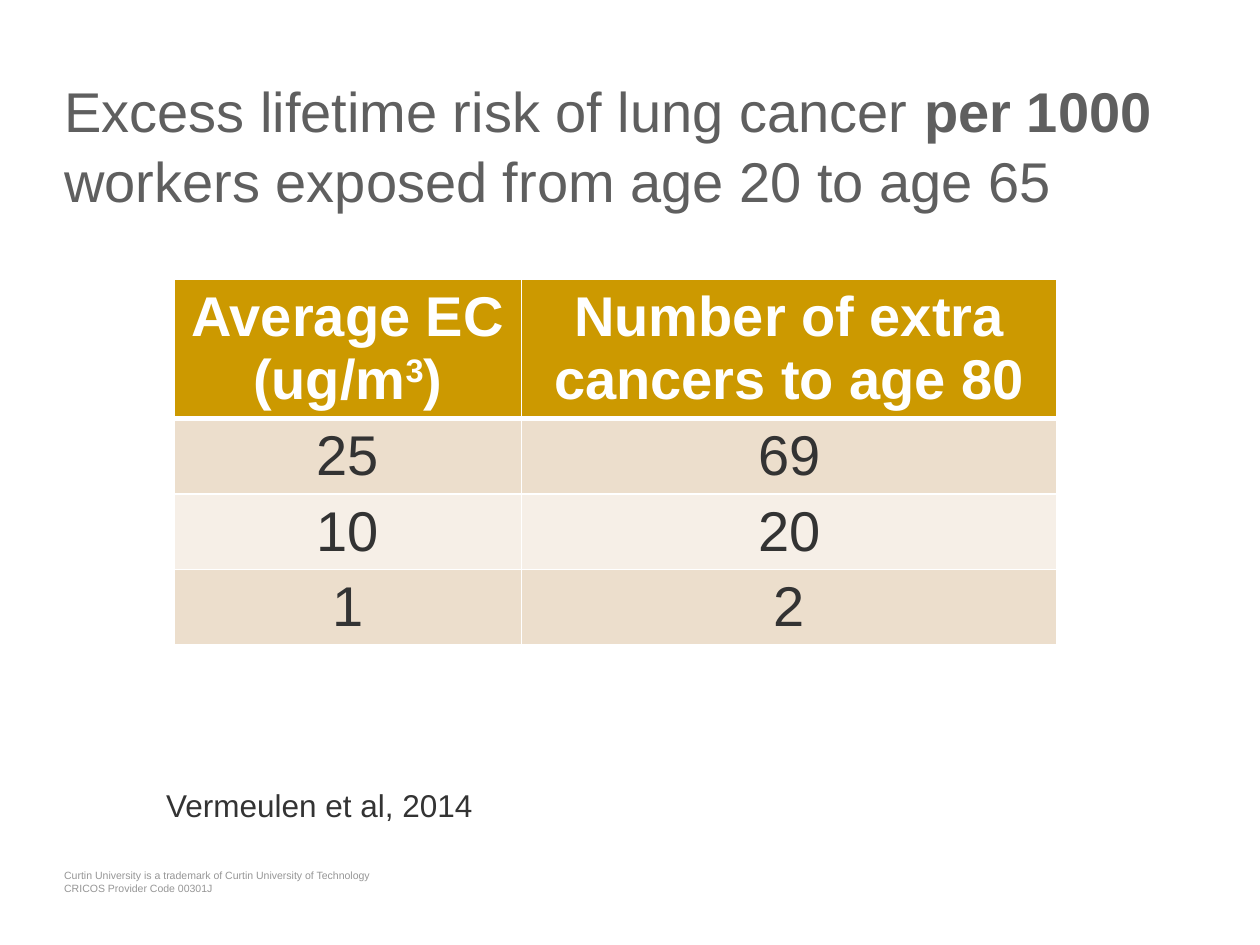
"""Build a slide with a table of excess lung cancer risk by exposure level."""
from lxml.etree import SubElement
from pptx import Presentation
from pptx.dml.color import RGBColor
from pptx.enum.text import MSO_ANCHOR, MSO_AUTO_SIZE, PP_ALIGN
from pptx.oxml.ns import qn
from pptx.util import Inches, Pt

WHITE = RGBColor(0xFF, 0xFF, 0xFF)
GOLD = RGBColor(0xCC, 0x99, 0x00)
SAND = RGBColor(0xEC, 0xDE, 0xCC)
CREAM = RGBColor(0xF6, 0xEF, 0xE7)
INK = RGBColor(0x33, 0x33, 0x33)
TITLE_GRAY = RGBColor(0x5F, 0x5F, 0x5F)
FOOTER_GRAY = RGBColor(0x96, 0x96, 0x96)

TITLE = [
    ("Excess lifetime risk of lung cancer ", ""),
    ("per 1000 ", "bold"),
    ("workers exposed from age 20 to age 65", ""),
]
ROWS = [
    ([("Average EC (ug/m", ""), ("3", "superscript"), (")", "")],
     "Number of extra cancers to age 80"),
    ("25", "69"),
    ("10", "20"),
    ("1", "2"),
]
COLUMN_WIDTHS = [2.76, 4.25]
ROW_HEIGHTS = [1.1, 0.6, 0.6, 0.6]
CITATION = "Vermeulen et al, 2014"
FOOTER = [
    "Curtin University is a trademark of Curtin University of Technology",
    "CRICOS Provider Code 00301J",
]


def write(frame, paragraphs, size, color, bold=False, align=PP_ALIGN.LEFT, spacing=1.0):
    """Fill a text frame with paragraphs, each a string or a list of styled runs."""
    for index, content in enumerate(paragraphs):
        paragraph = frame.paragraphs[0] if index == 0 else frame.add_paragraph()
        paragraph.alignment = align
        paragraph.line_spacing = spacing
        paragraph.space_before = Pt(0)
        runs = [(content, "")] if isinstance(content, str) else content
        for text, style in runs:
            run = paragraph.add_run()
            run.text = text
            run.font.name = "Arial"
            run.font.size = Pt(size)
            run.font.color.rgb = color
            run.font.bold = bold or style == "bold"
            if style == "superscript":
                run.font._element.set("baseline", "30000")


def place(shape, left, top, width, height, margins=True):
    """Position a text shape and return its wrapped text frame."""
    shape.left, shape.top = Inches(left), Inches(top)
    shape.width, shape.height = Inches(width), Inches(height)
    frame = shape.text_frame
    frame.word_wrap = True
    frame.auto_size = MSO_AUTO_SIZE.NONE
    if not margins:
        frame.margin_left = frame.margin_right = 0
        frame.margin_top = frame.margin_bottom = 0
    return frame


def add_text_box(slide, *box, margins=True):
    """Add a text box and return its text frame."""
    return place(slide.shapes.add_textbox(0, 0, 0, 0), *box, margins=margins)


def set_borders(cell, widths):
    """Draw white borders; the fill must be set afterwards."""
    properties = cell._tc.get_or_add_tcPr()
    for side, width in widths.items():
        line = SubElement(properties, qn(f"a:{side}"), w=str(Pt(width)))
        fill = SubElement(line, qn("a:solidFill"))
        SubElement(fill, qn("a:srgbClr"), val=str(WHITE))


def add_risk_table(slide):
    """Add the exposure and risk table."""
    table = slide.shapes.add_table(
        len(ROWS), len(COLUMN_WIDTHS), Inches(1.38), Inches(2.22),
        Inches(sum(COLUMN_WIDTHS)), Inches(sum(ROW_HEIGHTS))).table
    for column, width in zip(table.columns, COLUMN_WIDTHS):
        column.width = Inches(width)
    for index, (row, height, values) in enumerate(zip(table.rows, ROW_HEIGHTS, ROWS)):
        row.height = Inches(height)
        header = index == 0
        for cell, value in zip(row.cells, values):
            top, bottom = (3 if index == 1 else 1), (3 if header else 1)
            set_borders(cell, {"lnL": 1, "lnR": 1, "lnT": top, "lnB": bottom})
            cell.fill.solid()
            cell.fill.fore_color.rgb = GOLD if header else SAND if index % 2 else CREAM
            write(cell.text_frame, [value], 32, WHITE if header else INK,
                  bold=header, align=PP_ALIGN.CENTER)


def main():
    """Assemble and save the slide."""
    presentation = Presentation()
    presentation.slide_width, presentation.slide_height = Inches(10), Inches(7.5)
    slide = presentation.slides.add_slide(presentation.slide_layouts[5])

    title = place(slide.shapes.title, 0.51, 0.61, 8.98, 1.09, margins=False)
    title.vertical_anchor = MSO_ANCHOR.BOTTOM
    write(title, [TITLE], 32, TITLE_GRAY, spacing=1.05)

    add_risk_table(slide)
    write(add_text_box(slide, 1.22, 6.19, 2.66, 0.4), [CITATION], 18, INK)
    footer = add_text_box(slide, 0.51, 6.89, 3.07, 0.24, margins=False)
    write(footer, FOOTER, 6, FOOTER_GRAY, spacing=1.05)
    presentation.save("out.pptx")


if __name__ == "__main__":
    main()
